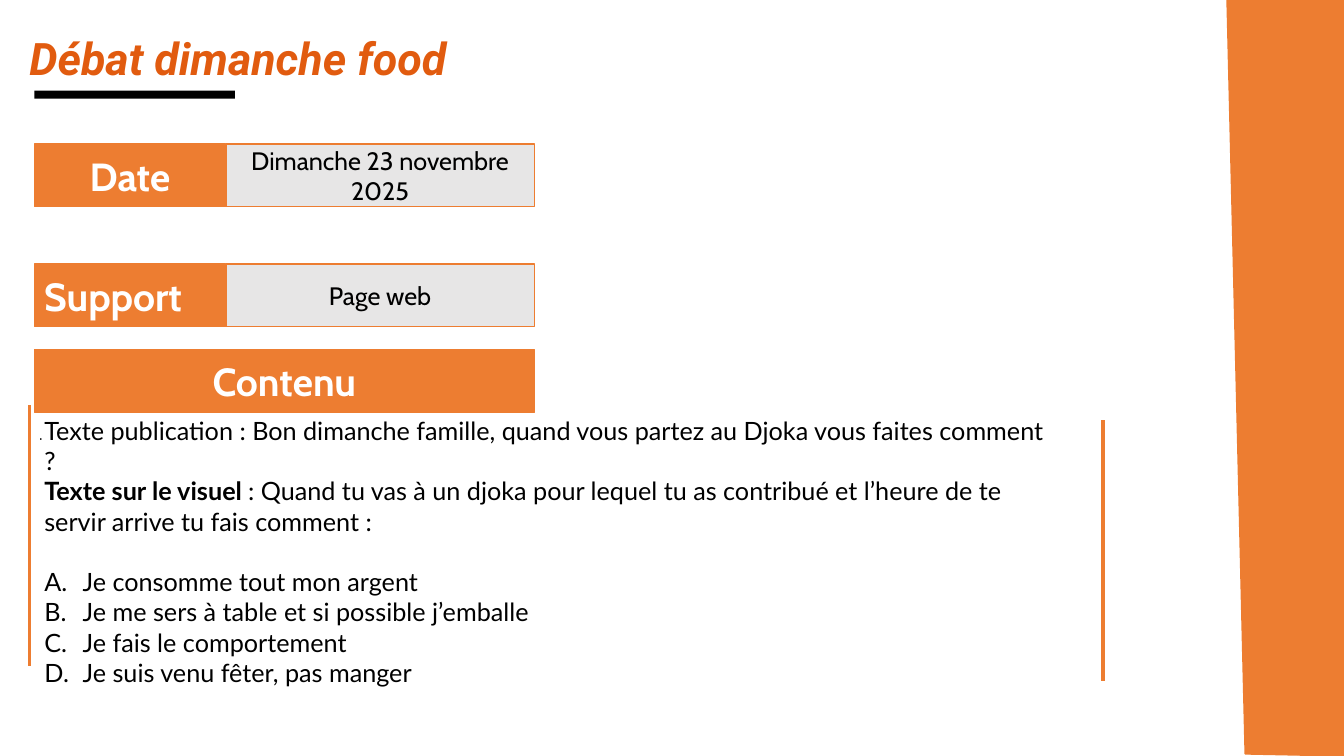
from lxml.etree import SubElement
from pptx import Presentation
from pptx.dml.color import RGBColor
from pptx.enum.shapes import MSO_CONNECTOR, MSO_SHAPE
from pptx.enum.text import MSO_ANCHOR, MSO_AUTO_SIZE, PP_ALIGN
from pptx.oxml.ns import qn
from pptx.util import Inches, Pt

ORANGE, GREY, BLACK, WHITE = "ED7D31", "E7E6E6", "000000", "FFFFFF"
TITLE = "Débat dimanche food"
FIELDS = [
    (1.43, "Date", PP_ALIGN.CENTER, "Dimanche 23 novembre 2025"),
    (2.62, "Support", PP_ALIGN.LEFT, "Page web"),
]
CONTENT = "Contenu"
TEXTS = [
    [("Texte publication : Bon dimanche famille, quand vous partez au Djoka "
      "vous faites comment ?", False)],
    [("Texte sur le visuel ", True),
     (": Quand tu vas à un djoka pour lequel tu as contribué et l’heure de te "
      "servir arrive tu fais comment :", False)],
]
ANSWERS = [
    "Je consomme tout mon argent",
    "Je me sers à table et si possible j’emballe",
    "Je fais le comportement",
    "Je suis venu fêter, pas manger",
]
BAND = [(12.17, 0), (13.33, 0), (13.33, 7.5), (12.35, 7.48)]
RULES = [(0.29, 4.02), (10.94, 4.17)]
RULE_LENGTH = 2.59
LEFT, LABEL_WIDTH, VALUE_WIDTH, BAR_HEIGHT = 0.34, 1.9, 3.06, 0.62
LIST_INDENT = 0.38


def color(value):
    return RGBColor.from_string(value)


def paint(sp, fill, line=None):
    sp.shadow.inherit = False
    sp.fill.solid()
    sp.fill.fore_color.rgb = color(fill)
    if line:
        sp.line.color.rgb = color(line)
        sp.line.width = Pt(1)
    else:
        sp.line.fill.background()


def style(r, name, size, fill=BLACK, bold=False, italic=False):
    r.font.name = name
    r.font.size = Pt(size)
    r.font.color.rgb = color(fill)
    r.font.bold = bold
    r.font.italic = italic


def place(sp, x, y, w, h):
    sp.left, sp.top, sp.width, sp.height = map(Inches, (x, y, w, h))
    tf = sp.text_frame
    tf.word_wrap = True
    tf.auto_size = MSO_AUTO_SIZE.NONE
    tf.vertical_anchor = MSO_ANCHOR.TOP
    return tf


def add_bar(s, x, y, w, text, fill, size, ink, bold, align=PP_ALIGN.CENTER):
    sp = s.shapes.add_shape(MSO_SHAPE.RECTANGLE, Inches(x), Inches(y),
                            Inches(w), Inches(BAR_HEIGHT))
    paint(sp, fill, ORANGE)
    tf = sp.text_frame
    tf.word_wrap = True
    tf.vertical_anchor = MSO_ANCHOR.MIDDLE
    p = tf.paragraphs[0]
    p.text = text
    p.alignment = align
    style(p.runs[0], "Cabin", size, ink, bold)


def add_paragraph(tf, first, runs, before=0, numbered=False):
    p = tf.paragraphs[0] if first else tf.add_paragraph()
    for text, bold in runs:
        r = p.add_run()
        r.text = text
        style(r, "Lato", 18, bold=bold)
    p.alignment = PP_ALIGN.LEFT
    p.space_before = Pt(before)
    indent = Inches(LIST_INDENT) if numbered else 0
    pPr = p._p.get_or_add_pPr()
    pPr.set("marL", str(indent))
    pPr.set("indent", str(-indent))
    if numbered:
        SubElement(pPr, qn("a:buFont"), typeface="+mj-lt")
        SubElement(pPr, qn("a:buAutoNum"), type="alphaUcPeriod")
    else:
        SubElement(pPr, qn("a:buNone"))


def main():
    prs = Presentation()
    prs.slide_width, prs.slide_height = Inches(13.33), Inches(7.5)
    s = prs.slides.add_slide(prs.slide_layouts[1])

    points = [(Inches(x), Inches(y)) for x, y in BAND]
    builder = s.shapes.build_freeform(*points[0])
    builder.add_line_segments(points[1:], close=True)
    paint(builder.convert_to_shape(), ORANGE, ORANGE)

    underline = s.shapes.add_shape(MSO_SHAPE.RECTANGLE, Inches(LEFT), Inches(0.9),
                                   Inches(1.99), Inches(0.08))
    paint(underline, BLACK)

    for y, label, align, value in FIELDS:
        add_bar(s, LEFT, y, LABEL_WIDTH, label, ORANGE, 28, WHITE, True, align)
        add_bar(s, LEFT + LABEL_WIDTH, y, VALUE_WIDTH, value, GREY, 18, BLACK, False)
    add_bar(s, LEFT, 3.47, LABEL_WIDTH + VALUE_WIDTH, CONTENT, ORANGE, 28, WHITE, True)

    for x, y in RULES:
        rule = s.shapes.add_connector(MSO_CONNECTOR.STRAIGHT, Inches(x), Inches(y),
                                      Inches(x), Inches(y + RULE_LENGTH))
        rule.line.color.rgb = color(ORANGE)
        rule.line.width = Pt(2.25)
        SubElement(rule._element.spPr, qn("a:effectLst"))

    dot = s.shapes.add_textbox(0, 0, 0, 0)
    p = place(dot, 0.29, 4.13, 10.56, 0.57).paragraphs[0]
    p.text = "."
    style(p.runs[0], "Quicksand", 14)

    p = place(s.shapes.title, 0.19, 0.25, 11.03, 0.52).paragraphs[0]
    p.text = TITLE
    p.alignment = PP_ALIGN.JUSTIFY
    style(p.runs[0], "Roboto", 32, "E15B0F", True, True)

    tf = place(s.placeholders[1], LEFT, 4.07, 10.15, 2.82)
    for i, runs in enumerate(TEXTS):
        add_paragraph(tf, i == 0, runs)
    for i, answer in enumerate(ANSWERS):
        add_paragraph(tf, False, [(answer, False)], 0 if i else 21.6, True)

    prs.save("out.pptx")


if __name__ == "__main__":
    main()
